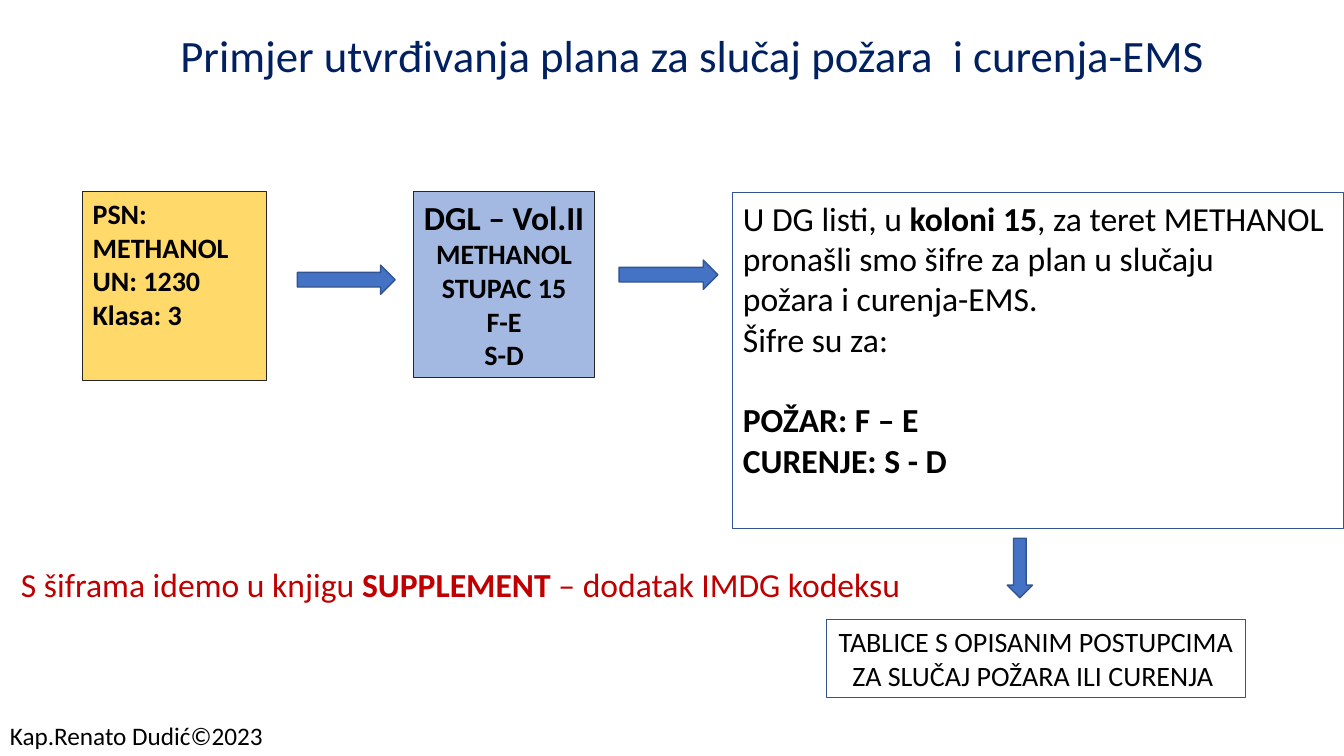
from pptx import Presentation, util as u
from pptx.dml.color import RGBColor
from pptx.enum import shapes, text
from pptx.oxml.ns import qn
from lxml import etree

NAVY = RGBColor(0x00, 0x20, 0x60)
RED = RGBColor(0xC0, 0x00, 0x00)
BLACK = RGBColor(0x00, 0x00, 0x00)
CHARCOAL = RGBColor(0x26, 0x26, 0x26)
GOLD = RGBColor(0xFF, 0xC0, 0x00)
BLUE = RGBColor(0x44, 0x72, 0xC4)
DARK_BLUE = RGBColor(0x32, 0x54, 0x91)

# Content: each paragraph is a list of runs; "**" marks a bold run
TITLE = [["Primjer utvrđivanja plana za slučaj požara  i curenja-EMS"]]
CARGO = [["**PSN: METHANOL"], ["**UN: 1230"], ["**Klasa: 3"]]
LIST_ENTRY = [["**DGL – Vol.II"], ["**METHANOL"], ["**STUPAC 15"], ["**F-E"], ["**S-D"]]
CODES = [
    ["U DG listi, u ", "**koloni 15", ", za teret METHANOL"],
    ["pronašli smo šifre za plan u slučaju"],
    ["požara i curenja-EMS."],
    ["Šifre su za:"],
    ["**POŽAR: F – E"],
    ["**CURENJE: S - D"],
]
TABLES = [["TABLICE S OPISANIM POSTUPCIMA"], ["ZA SLUČAJ POŽARA ILI CURENJA "]]
AUTHOR = [["Kap.Renato Dudić©2023"]]
SUPPLEMENT = [["S šiframa idemo u knjigu ", "**SUPPLEMENT", " – dodatak IMDG kodeksu"]]

# Boxes: place, paragraphs, fill, opacity in percent, line, text format
BOXES = [
    ((0.82, 1.9, 1.82, 1.88), CARGO, GOLD, 58, CHARCOAL, dict(size=20)),
    ((4.1, 1.9, 1.8, 1.85), LIST_ENTRY, BLUE, 49, CHARCOAL,
     dict(size=20, first_size=24, centred=True, wrap=False)),
    ((7.27, 1.91, 6.06, 3.33), CODES, None, 100, DARK_BLUE,
     dict(size=24, wrap=False, gaps={4: 29})),
    ((8.2, 6.15, 4.15, 0.77), TABLES, None, 100, DARK_BLUE,
     dict(size=20, centred=True, wrap=False)),
]
ARROWS = [
    ((2.95, 2.63, 0.97, 0.29), shapes.MSO_SHAPE.RIGHT_ARROW),
    ((6.14, 2.58, 0.98, 0.29), shapes.MSO_SHAPE.RIGHT_ARROW),
    ((9.99, 5.34, 0.25, 0.59), shapes.MSO_SHAPE.DOWN_ARROW),
]
LABELS = [
    ((1.69, 0.23, 10.54, 0.64), TITLE, dict(size=32, color=NAVY)),
    ((0, 7.1, 2.74, 0.4), AUTHOR, dict(size=18, wrap=False)),
    ((0.11, 5.55, 9.04, 0.5), SUPPLEMENT, dict(size=24, color=RED, wrap=False)),
]


def write(shape, paragraphs, size, first_size=None, color=BLACK, centred=False,
          wrap=True, gaps=None):
    frame = shape.text_frame
    frame.word_wrap = wrap
    frame.vertical_anchor = text.MSO_ANCHOR.TOP
    for index, runs in enumerate(paragraphs):
        paragraph = frame.paragraphs[0] if index == 0 else frame.add_paragraph()
        paragraph.alignment = text.PP_ALIGN.CENTER if centred else text.PP_ALIGN.LEFT
        if gaps and index in gaps:
            paragraph.space_before = u.Pt(gaps[index])
        for words in runs:
            run = paragraph.add_run()
            run.text = words.removeprefix("**")
            run.font.name = "Calibri"
            run.font.size = u.Pt(first_size if first_size and index == 0 else size)
            run.font.bold = words.startswith("**")
            run.font.color.rgb = color


def add_shape(slide, kind, place, fill, line, width, opacity=100):
    shape = slide.shapes.add_shape(kind, *map(u.Inches, place))
    shape.shadow.inherit = False
    shape.line.color.rgb = line
    shape.line.width = u.Pt(width)
    if fill is None:
        shape.fill.background()
        return shape
    shape.fill.solid()
    shape.fill.fore_color.rgb = fill
    if opacity < 100:
        color = shape.fill._xPr.find(qn("a:solidFill"))[0]
        etree.SubElement(color, qn("a:alpha")).set("val", str(opacity * 1000))
    return shape


def main():
    presentation = Presentation()
    presentation.slide_width = u.Inches(13.33)
    presentation.slide_height = u.Inches(7.5)
    slide = presentation.slides.add_slide(presentation.slide_layouts[6])

    # Steps of the procedure
    for place, paragraphs, fill, opacity, line, style in BOXES:
        box = add_shape(slide, shapes.MSO_SHAPE.RECTANGLE, place, fill, line, 0.75, opacity)
        write(box, paragraphs, **style)

    # Arrows between the steps
    for place, kind in ARROWS:
        add_shape(slide, kind, place, BLUE, DARK_BLUE, 1)

    # Title, author and remark
    for place, paragraphs, style in LABELS:
        write(slide.shapes.add_textbox(*map(u.Inches, place)), paragraphs, **style)

    presentation.save("out.pptx")


if __name__ == "__main__":
    main()
